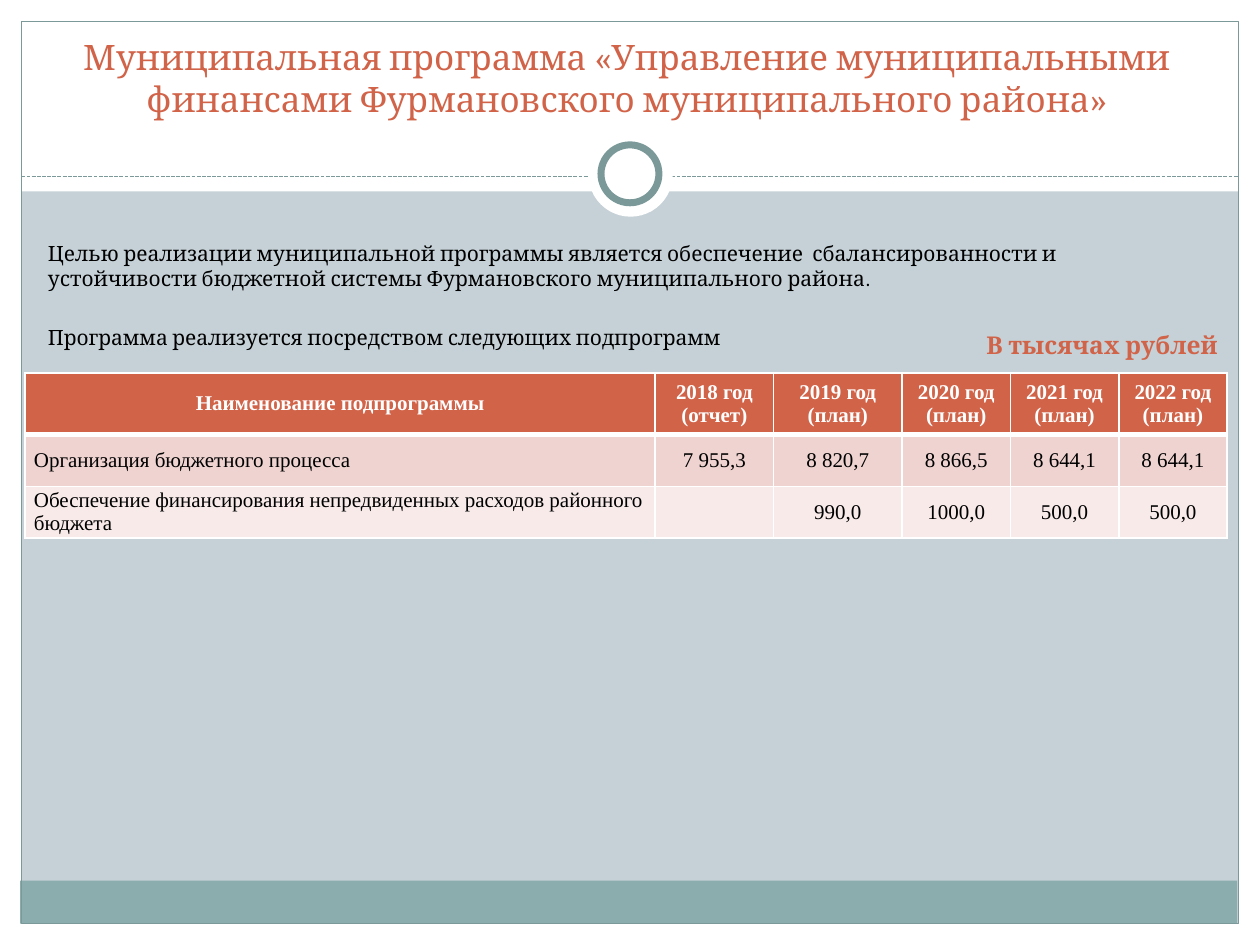
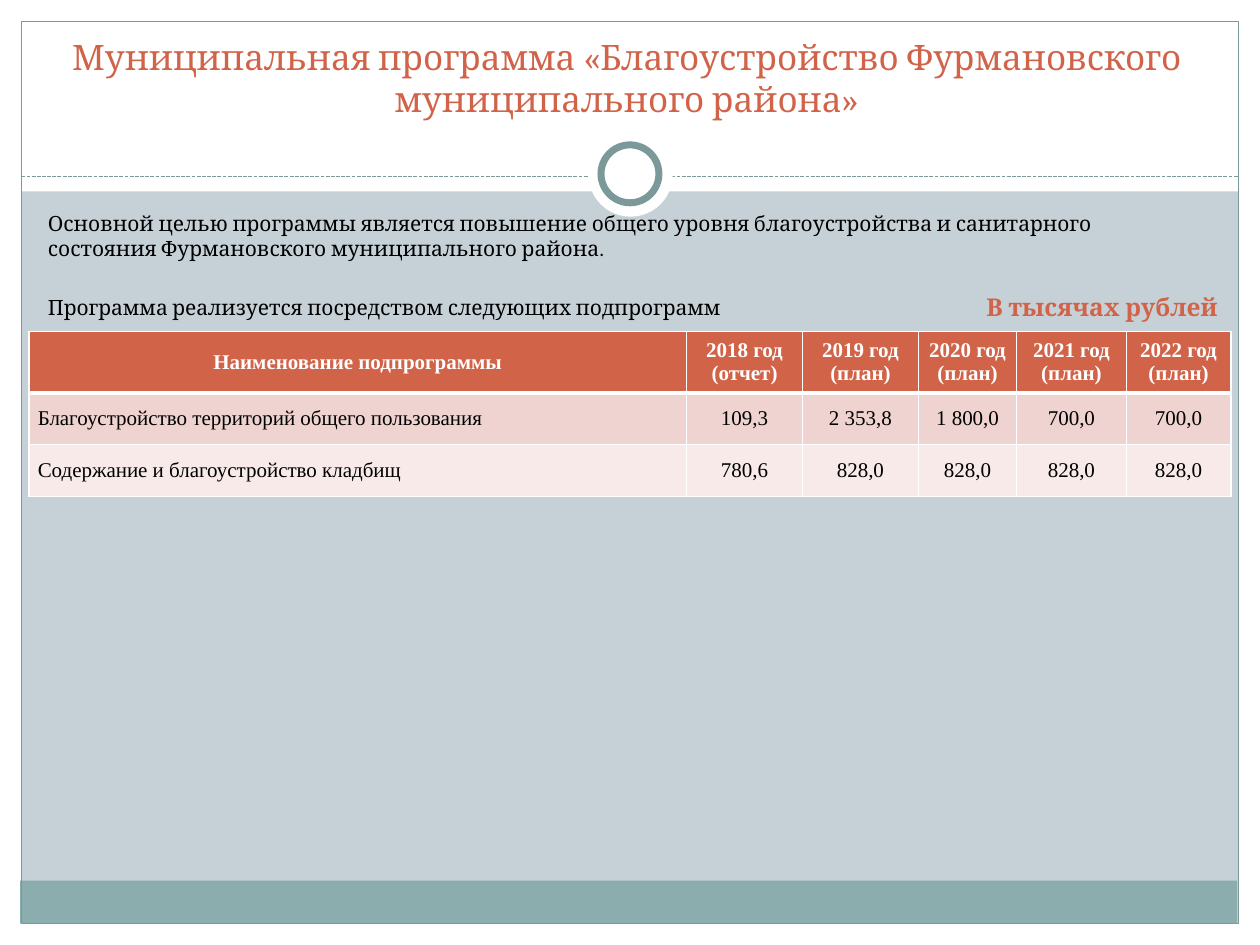
import dataclasses

import pptx
import pptx.dml.color
import pptx.enum.dml
import pptx.enum.shapes
import pptx.enum.text
import pptx.oxml
import pptx.oxml.ns
import pptx.util
from pptx.util import Inches

# Shared look
WHITE, BLACK, ACCENT = "FFFFFF", "000000", "D16349"
BACK, BAND, EDGE = "C5D1D7", "8CADAE", "7C999A"
ROW_FILLS = ("EED3D0", "F7EAE9")
SERIF, TABLE_FONT = "Cambria", "Times New Roman"

SHAPE = pptx.enum.shapes.MSO_SHAPE
ALIGN = pptx.enum.text.PP_ALIGN
ANCHOR = pptx.enum.text.MSO_ANCHOR

HEADER = ("Наименование подпрограммы", "2018 год\n(отчет)",
          *(f"{year} год\n(план)" for year in range(2019, 2023)))
ROW_HEIGHTS = (0.49, 0.41, 0.41)
SUBPROGRAMS_LINE = "Программа реализуется посредством следующих подпрограмм"


@dataclasses.dataclass
class FramePart:
    kind: SHAPE
    box: tuple[float, float, float, float]
    fill: str | None = WHITE
    line_width: float = 0


@dataclasses.dataclass
class Program:
    title: str
    goal: str
    body_top: float
    unit_top: float
    unit_height: float
    table_left: float
    table_top: float
    col_widths: tuple[float, ...]
    rows: tuple[tuple[str, ...], ...]


BANDS = (
    FramePart(SHAPE.RECTANGLE, (0, 7.33, 10, 0.17)),
    FramePart(SHAPE.RECTANGLE, (0, 0, 10, 1.52)),
    FramePart(SHAPE.RECTANGLE, (0, 0, 0.17, 7.5)),
    FramePart(SHAPE.RECTANGLE, (9.83, 0, 0.17, 7.5)),
    FramePart(SHAPE.RECTANGLE, (0.16, 6.99, 9.66, 0.34), BAND),
    FramePart(SHAPE.RECTANGLE, (0.17, 0.17, 9.66, 7.16), None, 0.75),
)
RING = (
    FramePart(SHAPE.OVAL, (4.67, 1.05, 0.67, 0.67)),
    FramePart(SHAPE.OVAL, (4.77, 1.15, 0.46, 0.46), WHITE, 4),
)

PROGRAMS = (
    Program(
        "Муниципальная программа «Управление муниципальными финансами "
        "Фурмановского муниципального района»",
        "Целью реализации муниципальной программы является обеспечение  "
        "сбалансированности и устойчивости бюджетной системы "
        "Фурмановского муниципального района.",
        1.86, 2.57, 0.38, 0.2, 2.96, (5, 0.94, 1.02, 0.86, 0.86, 0.86),
        (("Организация бюджетного процесса",
          "7 955,3", "8 820,7", "8 866,5", "8 644,1", "8 644,1"),
         ("Обеспечение финансирования непредвиденных расходов районного бюджета",
          "", "990,0", "1000,0", "500,0", "500,0")),
    ),
    Program(
        "Муниципальная программа «Благоустройство Фурмановского "
        "муниципального района»",
        "Основной целью программы является повышение общего уровня "
        "благоустройства и санитарного состояния Фурмановского "
        "муниципального района.",
        1.62, 2.27, 0.3, 0.23, 2.63, (5.22, 0.92, 0.92, 0.78, 0.87, 0.83),
        (("Благоустройство территорий общего пользования",
          "109,3", "2 353,8", "1 800,0", "700,0", "700,0"),
         ("Содержание и благоустройство кладбищ",
          "780,6", "828,0", "828,0", "828,0", "828,0")),
    ),
)


def rgb(value: str) -> pptx.dml.color.RGBColor:
    return pptx.dml.color.RGBColor.from_string(value)


def place(sp, left: float, top: float, width: float, height: float) -> None:
    sp.left, sp.top, sp.width, sp.height = map(Inches, (left, top, width, height))


def format_runs(tf, size: float, font: str, color: str, bold: bool = False) -> None:
    for p in tf.paragraphs:
        for r in p.runs:
            r.font.size = pptx.util.Pt(size)
            r.font.name = font
            r.font.bold = bold
            r.font.color.rgb = rgb(color)


# Frame shared through the layout
def add_part(s, part: FramePart):
    sp = s.shapes.add_shape(part.kind, *map(Inches, part.box))
    sp.shadow.inherit = False
    if part.fill:
        sp.fill.solid()
        sp.fill.fore_color.rgb = rgb(part.fill)
    else:
        sp.fill.background()
    if part.line_width:
        sp.line.color.rgb = rgb(EDGE)
        sp.line.width = pptx.util.Pt(part.line_width)
    else:
        sp.line.fill.background()
    return sp


def add_divider(s):
    line = s.shapes.add_connector(pptx.enum.shapes.MSO_CONNECTOR.STRAIGHT,
                                  Inches(0.17), Inches(1.4), Inches(9.83), Inches(1.4))
    line.line.color.rgb = rgb(EDGE)
    line.line.width = pptx.util.Pt(0.75)
    line.line.dash_style = pptx.enum.dml.MSO_LINE.SQUARE_DOT
    line.element.spPr.append(pptx.oxml.parse_xml(
        f"<a:effectLst {pptx.oxml.ns.nsdecls('a')}/>"))
    return line


def build_layout(layout, s) -> None:
    """Draw the frame on a slide, then hand it over to the layout."""
    layout.background.fill.solid()
    layout.background.fill.fore_color.rgb = rgb(BACK)
    for ph in list(layout.placeholders):
        if ph.placeholder_format.idx >= 10:
            ph.element.getparent().remove(ph.element)
    frame = [add_part(s, part) for part in BANDS]
    frame.append(add_divider(s))
    frame += [add_part(s, part) for part in RING]
    for sp in frame:
        layout.shapes.element.append(sp.element)


# Text
def fill_title(sp, text: str) -> None:
    place(sp, 0.31, 0.47, 9.33, 0.53)
    tf = sp.text_frame
    tf.text = text
    tf.auto_size = pptx.enum.text.MSO_AUTO_SIZE.NONE
    tf.vertical_anchor = ANCHOR.BOTTOM
    tf.paragraphs[0].alignment = ALIGN.CENTER
    format_runs(tf, 20, SERIF, ACCENT)


def fill_body(sp, goal: str, top: float) -> None:
    place(sp, 0.28, top, 9.3, 0.67)
    tf = sp.text_frame
    tf.text = f"{goal}\n{SUBPROGRAMS_LINE}"
    tf.auto_size = pptx.enum.text.MSO_AUTO_SIZE.NONE
    for p, gap in zip(tf.paragraphs, (2.4, 19)):
        p.space_before = pptx.util.Pt(gap)
        props = p._p.get_or_add_pPr()
        props.set("marL", "0")
        props.set("indent", "0")
        props.append(pptx.oxml.parse_xml(f"<a:buNone {pptx.oxml.ns.nsdecls('a')}/>"))
    format_runs(tf, 12, SERIF, BLACK)


def add_unit(s, top: float, height: float) -> None:
    sp = s.shapes.add_textbox(*map(Inches, (7.73, top, 2.27, height)))
    tf = sp.text_frame
    tf.word_wrap = True
    tf.text = "В тысячах рублей"
    format_runs(tf, 14, SERIF, ACCENT, bold=True)


# Table
def set_borders(cell, top: float, bottom: float) -> None:
    props = cell._tc.get_or_add_tcPr()
    for side, width in (("L", 1), ("R", 1), ("T", top), ("B", bottom)):
        props.append(pptx.oxml.parse_xml(
            f'<a:ln{side} {pptx.oxml.ns.nsdecls("a")} w="{pptx.util.Pt(width)}">'
            f'<a:solidFill><a:srgbClr val="{WHITE}"/></a:solidFill></a:ln{side}>'))


def fill_cell(cell, text: str, row: int, col: int) -> None:
    is_header = row == 0
    cell.text = text
    cell.vertical_anchor = ANCHOR.MIDDLE
    cell.margin_left = cell.margin_right = Inches(0.07)
    cell.margin_top = cell.margin_bottom = 0
    set_borders(cell, 3 if row == 1 else 1, 3 if is_header else 1)
    cell.fill.solid()
    cell.fill.fore_color.rgb = rgb(ACCENT if is_header else ROW_FILLS[row - 1])
    for p in cell.text_frame.paragraphs:
        p.alignment = ALIGN.CENTER if is_header or col else ALIGN.LEFT
        if not is_header:
            p.space_before = p.space_after = pptx.util.Pt(2)
    format_runs(cell.text_frame, 12, TABLE_FONT, WHITE if is_header else BLACK, is_header)


def add_budget_table(s, program: Program) -> None:
    rows = (HEADER, *program.rows)
    table = s.shapes.add_table(
        len(rows), len(HEADER), Inches(program.table_left), Inches(program.table_top),
        Inches(sum(program.col_widths)), Inches(sum(ROW_HEIGHTS))).table
    for column, width in zip(table.columns, program.col_widths):
        column.width = Inches(width)
    for i, (texts, height) in enumerate(zip(rows, ROW_HEIGHTS)):
        table.rows[i].height = Inches(height)
        for j, text in enumerate(texts):
            fill_cell(table.cell(i, j), text, i, j)


def main() -> None:
    prs = pptx.Presentation()
    prs.slide_width, prs.slide_height = Inches(10), Inches(7.5)
    layout = prs.slide_layouts[1]
    slides = [prs.slides.add_slide(layout) for _ in PROGRAMS]
    build_layout(layout, slides[0])
    for s, program in zip(slides, PROGRAMS):
        fill_title(s.shapes.title, program.title)
        fill_body(s.placeholders[1], program.goal, program.body_top)
        add_budget_table(s, program)
        add_unit(s, program.unit_top, program.unit_height)
    prs.save("out.pptx")


if __name__ == "__main__":
    main()
